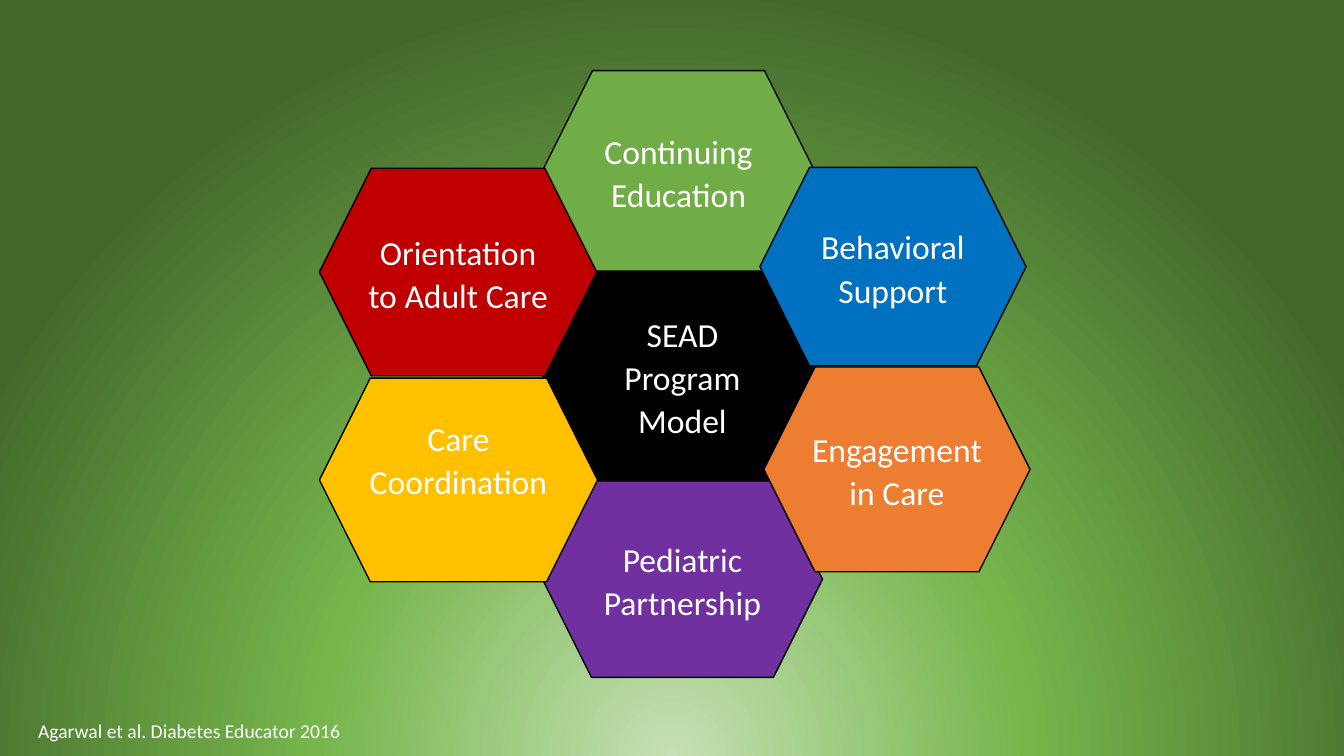
from lxml import etree
from pptx import Presentation
from pptx.dml.color import RGBColor
from pptx.enum.shapes import MSO_SHAPE
from pptx.enum.text import MSO_ANCHOR, MSO_AUTO_SIZE, PP_ALIGN
from pptx.oxml import parse_xml
from pptx.oxml.ns import nsdecls, qn
from pptx.util import Cm, Pt

HEXAGON = MSO_SHAPE.HEXAGON
MIDDLE = MSO_ANCHOR.MIDDLE
CENTER = PP_ALIGN.CENTER
FIT_SHAPE = MSO_AUTO_SIZE.SHAPE_TO_FIT_TEXT
BLANK_LAYOUT = 6
FONT = "Calibri"

COLORS = {
    "black": "000000",
    "white": "FFFFFF",
    "green": "70AD47",
    "blue": "0070C0",
    "red": "C00000",
    "purple": "7030A0",
    "yellow": "FFC000",
    "orange": "ED7D31",
    "glow": "C5E0B4",
    "meadow": "76B54C",
    "forest": "43682B",
}
# Stop position in percent, colour
BACKGROUND_STOPS = [(0, "glow"), (46, "meadow"), (100, "forest")]

# Text, fill, left, top, width, height, bottom inset (cm), from back to front
HEXAGONS = [
    ("SEAD Program Model", "black", 13.67, 6.81, 7.06, 5.31, 0.1),
    ("Continuing Education", "green", 13.67, 1.78, 6.86, 5.05, 0.1),
    ("Behavioral Support", "blue", 19.15, 4.22, 6.71, 5.0, 0.1),
    ("Orientation to Adult Care", "red", 8.05, 4.24, 6.99, 5.23, 0.1),
    ("Pediatric Partnership", "purple", 13.67, 12.12, 7.06, 4.95, 0.1),
    ("Care Coordination", "yellow", 8.05, 9.53, 7.01, 5.13, 1.2),
    ("Engagement in Care", "orange", 19.25, 9.25, 6.71, 5.16, 0.1),
]


def rgb(name):
    return RGBColor.from_string(COLORS[name])


def set_font(paragraph, size):
    paragraph.font.name = FONT
    paragraph.font.size = Pt(size)
    paragraph.font.color.rgb = rgb("white")


def set_radial_background(slide):
    """Fill the background with circles spreading from below the slide."""
    slide.background.fill.solid()
    solid = slide.element.xpath("p:cSld/p:bg/p:bgPr/a:solidFill")[0]
    gradient = parse_xml(f'<a:gradFill {nsdecls("a")} rotWithShape="1"/>')
    stops = etree.SubElement(gradient, qn("a:gsLst"))
    for percent, color in BACKGROUND_STOPS:
        stop = etree.SubElement(stops, qn("a:gs"), pos=str(percent * 1000))
        etree.SubElement(stop, qn("a:srgbClr"), val=COLORS[color])
    circle = etree.SubElement(gradient, qn("a:path"), path="circle")
    etree.SubElement(circle, qn("a:fillToRect"),
                     l="50000", t="130000", r="50000", b="-30000")
    solid.getparent().replace(solid, gradient)


def add_hexagon(group, text, color, left, top, width, height, bottom_inset):
    shape = group.shapes.add_shape(HEXAGON, Cm(left), Cm(top), Cm(width), Cm(height))
    shape.shadow.inherit = False
    shape.fill.solid()
    shape.fill.fore_color.rgb = rgb(color)
    shape.line.color.rgb = rgb("black")
    shape.line.width = Pt(1)

    frame = shape.text_frame
    frame.word_wrap = True
    frame.vertical_anchor = MIDDLE
    frame.margin_left = frame.margin_right = Cm(0.18)
    frame.margin_top = Cm(0.1)
    frame.margin_bottom = Cm(bottom_inset)
    paragraph = frame.paragraphs[0]
    paragraph.text = text
    paragraph.alignment = CENTER
    paragraph.line_spacing = 1.07
    paragraph.space_after = Pt(6)
    set_font(paragraph, 24)


def add_citation(slide, text):
    box = slide.shapes.add_textbox(Cm(0.71), Cm(17.98), Cm(8.33), Cm(0.86))
    frame = box.text_frame
    frame.word_wrap = False
    frame.auto_size = FIT_SHAPE
    paragraph = frame.paragraphs[0]
    paragraph.text = text
    set_font(paragraph, 14)


def main():
    presentation = Presentation()
    presentation.slide_width = Cm(33.87)
    presentation.slide_height = Cm(19.05)
    slide = presentation.slides.add_slide(presentation.slide_layouts[BLANK_LAYOUT])
    set_radial_background(slide)

    # Program model: a centre with six parts around it
    model = slide.shapes.add_group_shape()
    for hexagon in HEXAGONS:
        add_hexagon(model, *hexagon)

    # Citation
    add_citation(slide, "Agarwal et al. Diabetes Educator 2016")
    presentation.save("out.pptx")


if __name__ == "__main__":
    main()
